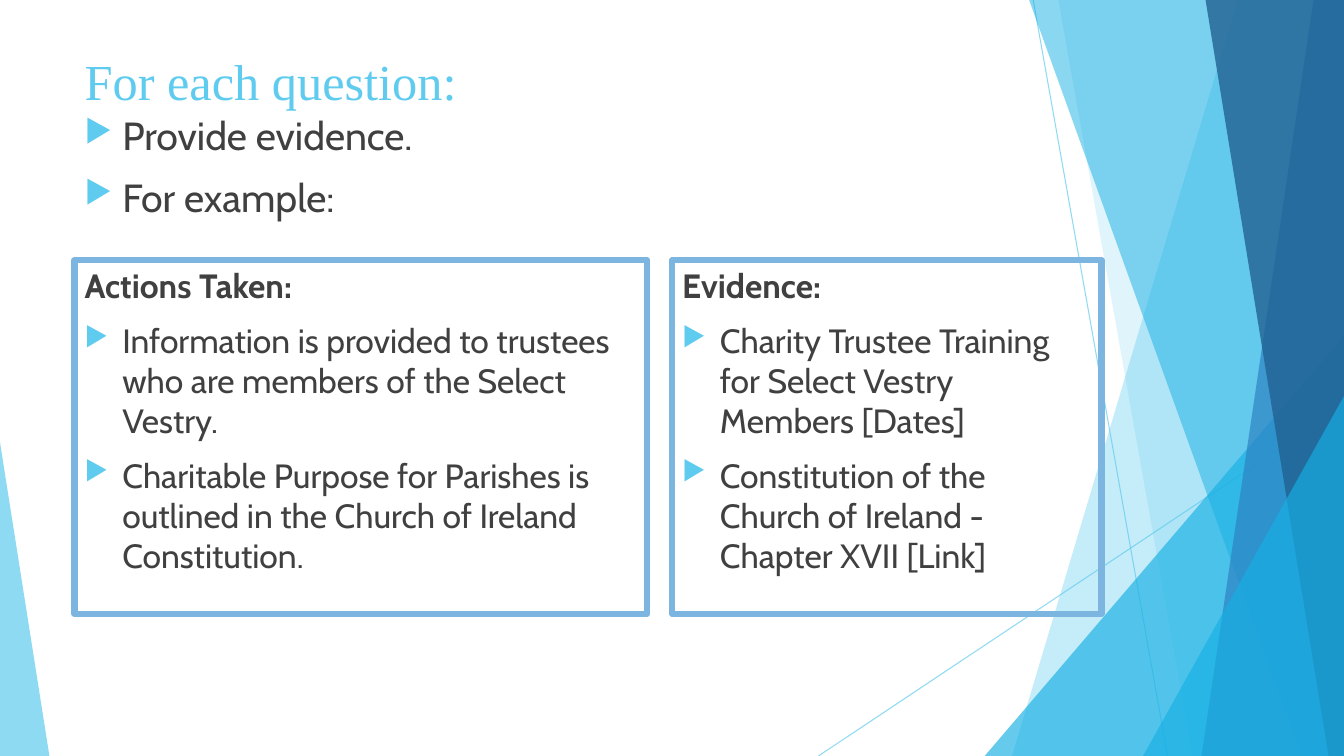
from lxml import etree
from pptx import Presentation
from pptx import util as u
from pptx.dml.color import RGBColor
from pptx.enum import shapes, text
from pptx.oxml import ns

WIDTH, HEIGHT = 960, 540
COLOURS = {
    "sky": "5FCBEF", "cyan": "17B0E4", "blue": "2E83C3", "navy": "226292",
    "frame": "7CB5E0", "ink": "404040",
}


def add_xml(parent, tag, **attributes):
    return etree.SubElement(parent, ns.qn(tag), attributes)


class Slide:
    """Holds the style and the current page; all lengths are in points."""
    heading_font, body_font = "Times New Roman", "Cabin"
    indent, gap = 27, 10

    def __init__(self, page):
        self.page = page

    def paint(self, fill, colour, opacity=100):
        """Set a solid colour on a fill, with opacity in percent."""
        fill.solid()
        fill.fore_color.rgb = RGBColor.from_string(COLOURS[colour])
        if opacity < 100:
            for tone in fill._xPr.iter(ns.qn("a:srgbClr")):
                add_xml(tone, "a:alpha", val=str(opacity * 1000))

    def finish(self, shape, colour, opacity):
        shape.shadow.inherit = False
        shape.line.fill.background()
        self.paint(shape.fill, colour, opacity)

    def hairline(self, start, end):
        line = self.page.shapes.add_connector(
            shapes.MSO_CONNECTOR.STRAIGHT, *map(u.Pt, start + end))
        line.line.width = u.Pt(0.75)
        self.paint(line.line.fill, "sky", 70)
        add_xml(line._element.spPr, "a:effectLst")

    def band(self, top_x, bottom_x, colour, opacity):
        """Fill from a slanted left edge to the right edge of the page."""
        builder = self.page.shapes.build_freeform(u.Pt(top_x), 0)
        corners = [(WIDTH, 0), (WIDTH, HEIGHT), (bottom_x, HEIGHT)]
        builder.add_line_segments([(u.Pt(x), u.Pt(y)) for x, y in corners])
        self.finish(builder.convert_to_shape(), colour, opacity)

    def wedge(self, left, top, right, apex, colour, opacity):
        """Triangle standing on the bottom edge; apex 0 is left, 1 is right."""
        shape = self.page.shapes.add_shape(
            shapes.MSO_SHAPE.ISOSCELES_TRIANGLE, u.Pt(left), u.Pt(top),
            u.Pt(right - left), u.Pt(HEIGHT - top))
        shape.adjustments[0] = apex
        self.finish(shape, colour, opacity)

    def add_words(self, para, words, size=24, font=body_font, colour="ink",
                  bold=False, bullet=False):
        para.alignment = text.PP_ALIGN.LEFT
        span = para.add_run()
        span.text = words
        span.font.size, span.font.name, span.font.bold = u.Pt(size), font, bold
        span.font.color.rgb = RGBColor.from_string(COLOURS[colour])
        if bullet:
            props = para._p.get_or_add_pPr()
            props.set("marL", str(u.Pt(self.indent)))
            props.set("indent", str(-u.Pt(self.indent)))
            tone = add_xml(props, "a:buClr")
            add_xml(tone, "a:srgbClr", val=COLOURS["sky"])
            add_xml(props, "a:buSzPct", val="80000")
            add_xml(props, "a:buChar", char="▶")

    def fill_frame(self, box, lines, anchor=text.MSO_ANCHOR.TOP):
        """Put lines, each a pair of words and format, into a box."""
        frame = box.text_frame
        frame.word_wrap = True
        frame.vertical_anchor = anchor
        for number, (words, style) in enumerate(lines):
            para = frame.add_paragraph() if number else frame.paragraphs[0]
            para.space_before = u.Pt(self.gap if number else 0)
            self.add_words(para, words, **style)

    def text_box(self, left, top, width, height, lines, **options):
        box = self.page.shapes.add_textbox(*map(u.Pt, (left, top, width, height)))
        self.fill_frame(box, lines, **options)

    def panel(self, left, top, width, height, heading, points):
        """Outlined box with a bold heading and bulleted points."""
        box = self.page.shapes.add_shape(
            shapes.MSO_SHAPE.RECTANGLE, *map(u.Pt, (left, top, width, height)))
        box.shadow.inherit = False
        box.fill.background()
        self.paint(box.line.fill, "frame")
        box.line.width = u.Pt(4.5)
        lines = [(heading, {"bold": True})]
        lines += [(point, {"bullet": True}) for point in points]
        self.fill_frame(box, lines)


def main():
    deck = Presentation()
    deck.slide_width, deck.slide_height = u.Pt(WIDTH), u.Pt(HEIGHT)
    slide = Slide(deck.slides.add_slide(deck.slide_layouts[6]))

    slide.hairline((738, 0), (834, HEIGHT))
    slide.hairline((WIDTH, 290), (584.6, HEIGHT))
    slide.band(884.2, 722.9, "sky", 36)
    slide.band(756, 851.8, "sky", 20)
    slide.wedge(703.4, 239.8, WIDTH, 1, "cyan", 66)
    slide.band(735.1, 929.5, "cyan", 50)
    slide.band(938.2, 858.2, "blue", 70)
    slide.band(861.1, 949, "navy", 80)
    slide.wedge(816.5, 283, WIDTH, 1, "cyan", 66)
    slide.wedge(0, 316, 35.3, 0, "sky", 70)

    title = {"size": 36, "font": slide.heading_font, "colour": "sky"}
    slide.text_box(53.3, 26.6, 677, 61.2, [("For each question:", title)],
                   anchor=text.MSO_ANCHOR.MIDDLE)
    lead = {"size": 28, "bullet": True}
    slide.text_box(53.3, 76.3, 677, 103,
                   [("Provide evidence.", lead), ("For example:", lead)])

    panels = [
        (53.3, 409, "Actions Taken:", [
            "Information is provided to trustees who are members of the Select Vestry.",
            "Charitable Purpose for Parishes is outlined in the Church of Ireland Constitution."]),
        (480.2, 306.7, "Evidence:", [
            "Charity Trustee Training for Select Vestry Members [Dates]",
            "Constitution of the Church of Ireland - Chapter XVII [Link]"]),
    ]
    for left, width, heading, points in panels:
        slide.panel(left, 185.8, width, 252.7, heading, points)

    deck.save("out.pptx")


if __name__ == "__main__":
    main()
